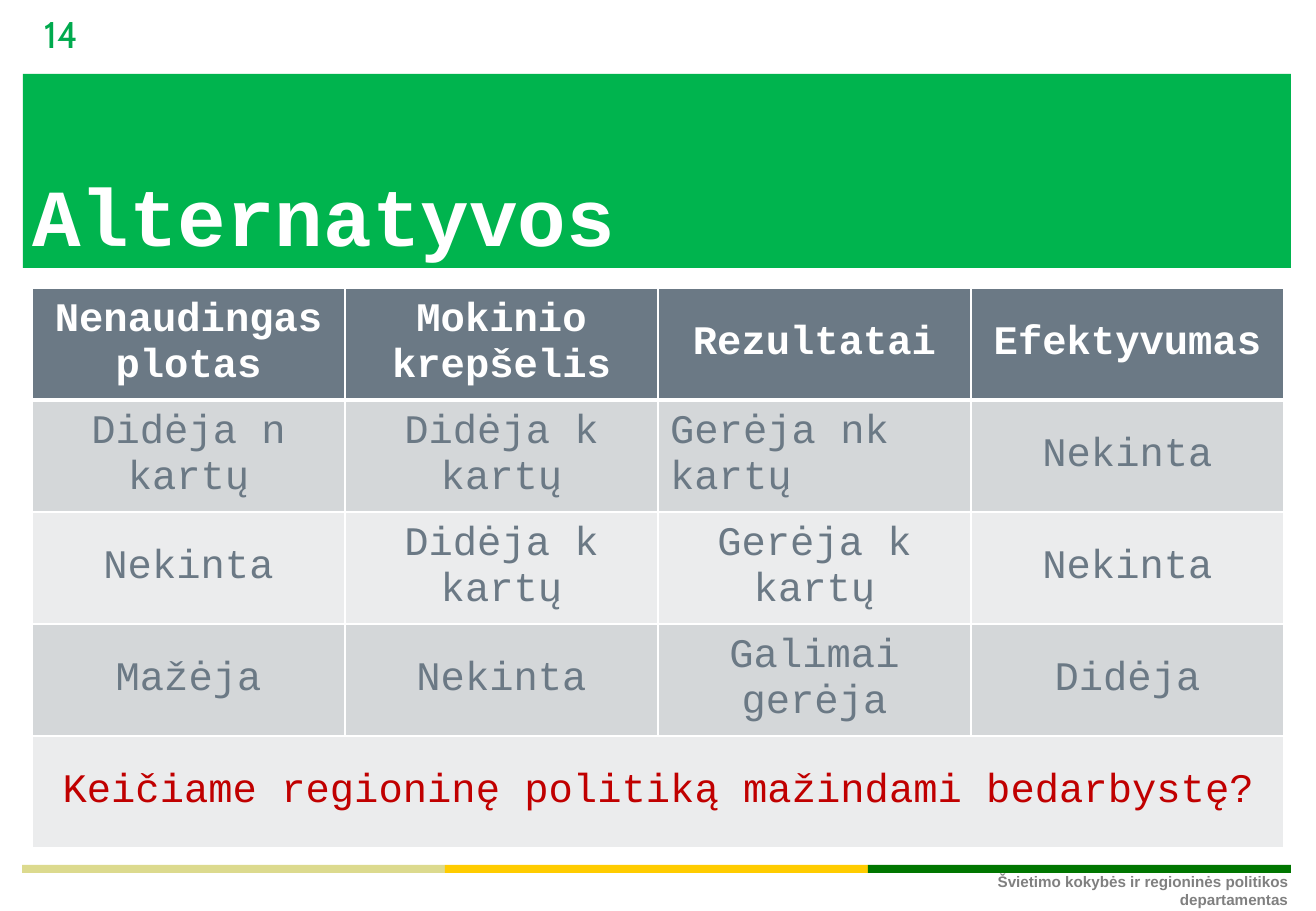
from pptx import Presentation
from pptx.dml.color import RGBColor
from pptx.enum.shapes import MSO_SHAPE
from pptx.enum.text import MSO_ANCHOR, MSO_AUTO_SIZE, PP_ALIGN
from pptx.oxml.ns import qn
from pptx.util import Pt
from lxml.etree import SubElement

# Content
TITLE = "Alternatyvos"
SLIDE_NUMBER = "14"
DEPARTMENT = "Švietimo kokybės ir regioninės politikos departamentas"
ROWS = [
    ("Nenaudingas plotas", "Mokinio krepšelis", "Rezultatai", "Efektyvumas"),
    ("Didėja n kartų", "Didėja k kartų", "Gerėja nk kartų", "Nekinta"),
    ("Nekinta", "Didėja k kartų", "Gerėja k kartų", "Nekinta"),
    ("Mažėja", "Nekinta", "Galimai gerėja", "Didėja"),
    ("Keičiame regioninę politiką mažindami bedarbystę?", "", "", ""),
]
LEFT_ALIGNED_CELL = (1, 2)

# Formats
WHITE, SLATE = "FFFFFF", "6B7985"
BAND_FILLS = ("EBECED", "D4D7D9")
STRIPES = ("DCDA8E", "FFCC00", "007600")
MONO = {"name": "Courier New", "size": Pt(24), "bold": False}
TITLE_FONT = {"name": "Courier New", "size": Pt(48), "bold": True}
NUMBER_FONT = {"name": "Cabin", "size": Pt(22), "bold": False}
FOOTER_FONT = {"name": "Arial", "size": Pt(9), "bold": True}

EMU_PER_PX = 7526


def px(*lengths):
    return [length * EMU_PER_PX for length in lengths]


def color(hex_string):
    return RGBColor.from_string(hex_string)


def format_paragraph(paragraph, font, hex_string, alignment=PP_ALIGN.LEFT):
    paragraph.alignment = alignment
    for name, value in font.items():
        setattr(paragraph.font, name, value)
    paragraph.font.color.rgb = color(hex_string)


def format_frame(frame, anchor, horizontal, vertical):
    values = {
        "word_wrap": True, "auto_size": MSO_AUTO_SIZE.NONE, "vertical_anchor": anchor,
        "margin_left": horizontal, "margin_right": horizontal,
        "margin_top": vertical, "margin_bottom": vertical,
    }
    for name, value in values.items():
        setattr(frame, name, value)


def add_bar(slide, box, hex_string):
    shape = slide.shapes.add_shape(MSO_SHAPE.RECTANGLE, *px(*box))
    shape.shadow.inherit = False
    shape.fill.solid()
    shape.fill.fore_color.rgb = color(hex_string)
    shape.line.fill.background()


def add_label(slide, box, text, anchor, font, hex_string, alignment):
    frame = slide.shapes.add_textbox(*px(*box)).text_frame
    format_frame(frame, anchor, *px(9, 5))
    frame.text = text
    format_paragraph(frame.paragraphs[0], font, hex_string, alignment)


def add_borders(cell, bottom_width):
    properties = cell._tc.get_or_add_tcPr()
    widths = {"a:lnL": 1, "a:lnR": 1, "a:lnT": 1, "a:lnB": bottom_width}
    for position, (tag, width) in enumerate(widths.items()):
        line = SubElement(properties, qn(tag), w=str(Pt(width)))
        fill = SubElement(line, qn("a:solidFill"))
        SubElement(fill, qn("a:srgbClr"), val=WHITE)
        properties.insert(position, line)


def add_alternatives(slide):
    row_count, column_count = len(ROWS), len(ROWS[0])
    table = slide.shapes.add_table(
        row_count, column_count, *px(32, 288, 313 * column_count, 112 * row_count)
    ).table
    last_row = row_count - 1
    for row, texts in enumerate(ROWS):
        is_header = row == 0
        fill = SLATE if is_header else BAND_FILLS[row % 2]
        ink = WHITE if is_header else "C00000" if row == last_row else SLATE
        for column, text in enumerate(texts):
            cell = table.cell(row, column)
            cell.fill.solid()
            cell.fill.fore_color.rgb = color(fill)
            cell.vertical_anchor = MSO_ANCHOR.MIDDLE
            add_borders(cell, 3 if is_header else 1)
            cell.text = text
            is_left = (row, column) == LEFT_ALIGNED_CELL
            format_paragraph(
                cell.text_frame.paragraphs[0], MONO | {"bold": is_header}, ink,
                PP_ALIGN.LEFT if is_left else PP_ALIGN.CENTER,
            )
    table.cell(last_row, 0).merge(table.cell(last_row, column_count - 1))


def main():
    presentation = Presentation()
    presentation.slide_width, presentation.slide_height = px(1316, 911)
    slide = presentation.slides.add_slide(presentation.slide_layouts[5])

    # Title on its green band
    add_bar(slide, (23, 74, 1268, 194), "00B44E")
    title = slide.shapes.title
    title.left, title.top, title.width, title.height = px(32, 78, 1252, 185)
    title.text = TITLE
    format_frame(title.text_frame, MSO_ANCHOR.BOTTOM, 0, 0)
    format_paragraph(title.text_frame.paragraphs[0], TITLE_FONT, WHITE)
    # Raise the title above the band
    slide.shapes._spTree.append(title._element)

    # Slide number
    add_label(slide, (35, 14, 60, 40), SLIDE_NUMBER, MSO_ANCHOR.MIDDLE,
              NUMBER_FONT, "00AA4E", PP_ALIGN.LEFT)

    # Table of alternatives
    add_alternatives(slide)

    # Footer stripes and department
    for index, stripe in enumerate(STRIPES):
        add_bar(slide, (22 + 423 * index, 865, 423, 8), stripe)
    add_label(slide, (957, 867, 340, 44), DEPARTMENT, MSO_ANCHOR.TOP,
              FOOTER_FONT, "808080", PP_ALIGN.RIGHT)

    presentation.save("out.pptx")


if __name__ == "__main__":
    main()
